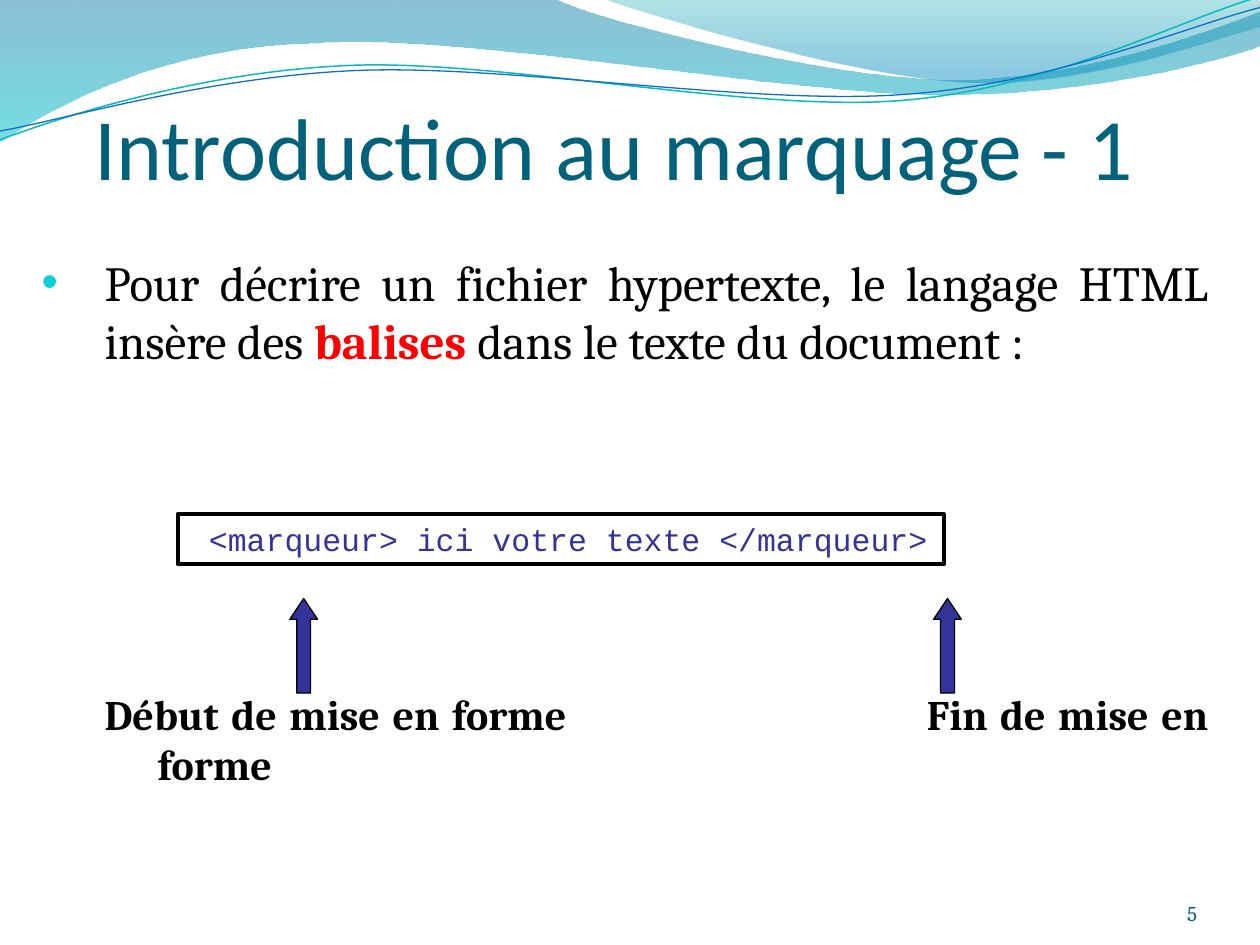
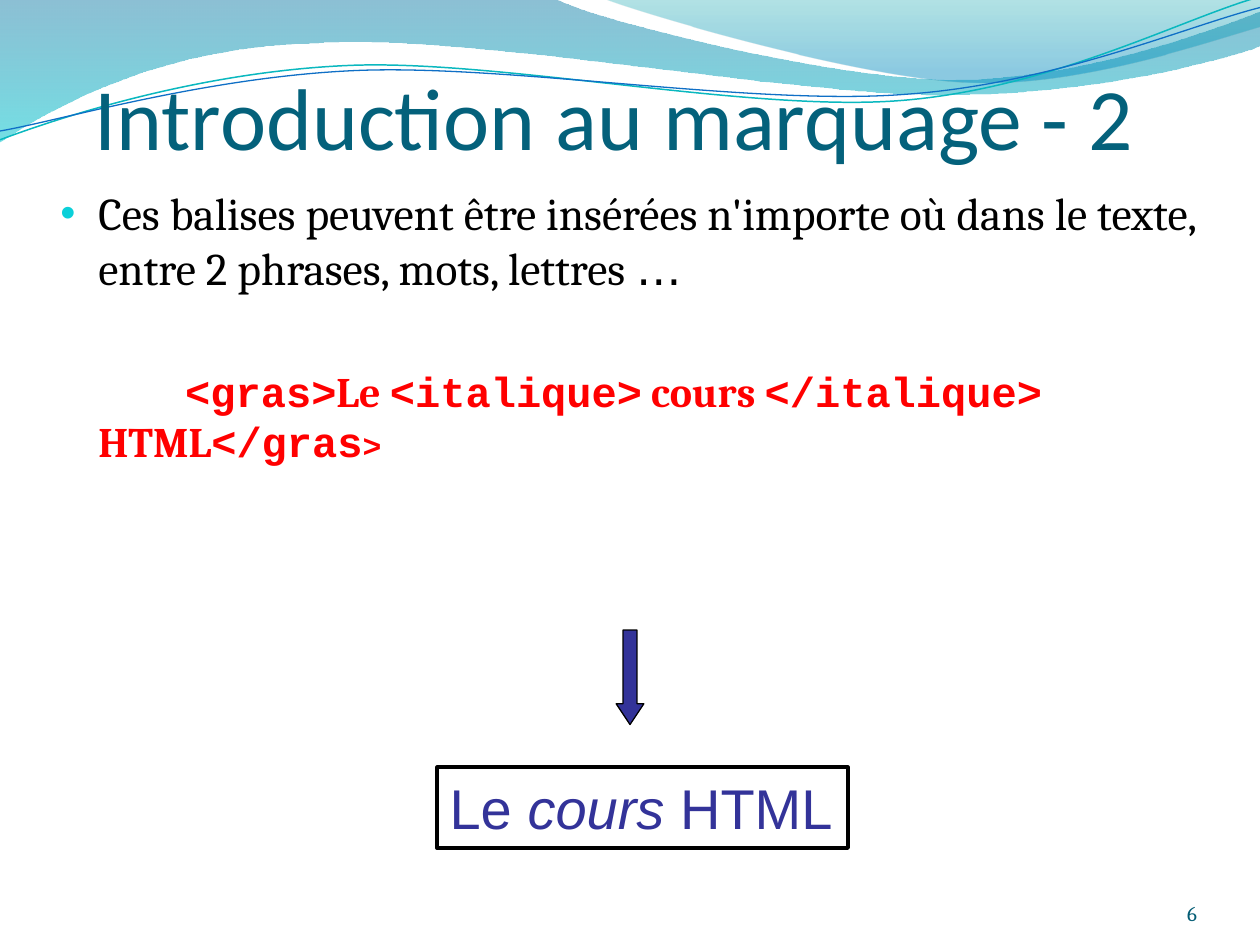
from dataclasses import dataclass

from lxml import etree
from pptx import Presentation
from pptx.dml.color import RGBColor
from pptx.enum.shapes import MSO_SHAPE
from pptx.enum.text import MSO_ANCHOR, MSO_AUTO_SIZE, PP_ALIGN
from pptx.oxml.ns import qn
from pptx.util import Inches, Pt

RECT, UP, DOWN = MSO_SHAPE.RECTANGLE, MSO_SHAPE.UP_ARROW, MSO_SHAPE.DOWN_ARROW
LEFT, RIGHT, FULL = PP_ALIGN.LEFT, PP_ALIGN.RIGHT, PP_ALIGN.JUSTIFY
TOP, LOW = MSO_ANCHOR.TOP, MSO_ANCHOR.BOTTOM
FIXED, GROW = MSO_AUTO_SIZE.NONE, MSO_AUTO_SIZE.SHAPE_TO_FIT_TEXT

PAGE = (0, 0, Inches(10), Inches(7.5))


@dataclass(frozen=True)
class Theme:
    """Colours, fonts and type sizes of the deck."""

    ink: str = "000000"
    title: str = "04617B"
    foot: str = "045D75"
    mark: str = "0BD0D9"
    hot: str = "FF0000"
    blue: str = "333399"
    head: str = "Calibri"
    text: str = "Cambria"
    code: str = "Courier New"
    sans: str = "Arial"
    sign: str = "DejaVu Sans"
    huge: int = 50
    large: int = 32
    lead: int = 28
    base: int = 26
    note: int = 24
    small: int = 18
    tiny: int = 12


T = Theme()

BANDS = [
    ([(0, 0), (4.4, -0.01),
      (4.76, 0.17, 6.64, 0.63, 7.58, 0.63), (8.53, 0.63, 9.58, 0.26, 10, 0.09),
      (10.01, 0.36),
      (9.83, 0.44, 8.7, 0.76, 7.46, 0.75), (6.22, 0.75, 3.82, 0.28, 2.57, 0.34),
      (1.29, 0.36, 0.46, 0.83, -0.01, 1.13)],
     [(0, "0074A1", 45), (1, "00C6CF", 55)]),
    ([(4.79, -0.01),
      (5.09, 0.11, 6.82, 0.62, 7.69, 0.65), (8.56, 0.69, 9.61, 0.32, 10, 0.21),
      (10, 0)],
     [(0, "00A1A9", 30), (0.8, "008BBF", 45)]),
]
LINES = [
    ([(0, 1.11), (0.48, 0.93, 1.58, 0.57, 2.77, 0.52),
      (3.95, 0.47, 5.93, 0.89, 7.13, 0.8), (8.33, 0.71, 9.38, 0.15, 9.98, -0.02)],
     "0AB8BF", 0.85),
    ([(0, 1.04), (0.47, 0.96, 1.64, 0.61, 2.83, 0.56),
      (4.03, 0.51, 5.97, 0.84, 7.17, 0.75), (8.36, 0.67, 9.41, 0.21, 10, 0.06)],
     "0F6FC6", 0.75),
]


def rgb(code):
    """Turn a hex code into a colour."""
    return RGBColor.from_string(code)


def part(box, x, y, w, h):
    """Return the part of a box given in percent of its size."""
    left, top, wide, high = box
    return (round(left + wide * x / 100), round(top + high * y / 100),
            round(wide * w / 100), round(high * h / 100))


def apply(item, **vals):
    """Set each given value on an item."""
    for key, val in vals.items():
        setattr(item, key, val)


def move(shape, box):
    """Put a shape in a box."""
    apply(shape, **dict(zip(("left", "top", "width", "height"), box)))


def write(para, runs):
    """Add runs of (text, font, size, colour, extra format)."""
    for text, name, size, tint, more in runs:
        run = para.add_run()
        run.text = text
        apply(run.font, name=name, size=Pt(size), **more)
        run.font.color.rgb = rgb(tint)


def bend(shape, steps):
    """Join the three points of each curved step into one curve."""
    nodes = iter(list(shape.element.iter(qn("a:lnTo"))))
    for step in steps:
        group = [next(nodes) for _ in range(len(step) // 2)]
        if len(group) == 1:
            continue
        curve = etree.Element(qn("a:cubicBezTo"))
        group[0].addprevious(curve)
        for node in group:
            curve.append(node[0])
            node.getparent().remove(node)


def draw(slide, steps, close):
    """Build one outline from straight and curved steps."""
    pts = [tuple(Inches(v) for v in step[n:n + 2])
           for step in steps for n in range(0, len(step), 2)]
    pen = slide.shapes.build_freeform(*pts[0], scale=1.0)
    pen.add_line_segments(pts[1:], close=close)
    shape = pen.convert_to_shape()
    shape.shadow.inherit = False
    bend(shape, steps[1:])
    return shape


def waves(slide, master):
    """Draw the top waves and move them to the master."""
    made = []
    for steps, stops in BANDS:
        band = draw(slide, steps, True)
        band.line.fill.background()
        band.fill.gradient()
        band.fill.gradient_angle = 270
        for stop, (pos, tint, _) in zip(band.fill.gradient_stops, stops):
            stop.position = pos
            stop.color.rgb = rgb(tint)
        for node, (_, _, alpha) in zip(band.element.iter(qn("a:srgbClr")), stops):
            etree.SubElement(node, qn("a:alpha")).set("val", str(alpha * 1000))
        made.append(band)
    for steps, tint, width in LINES:
        curve = draw(slide, steps, False)
        curve.fill.background()
        curve.line.color.rgb = rgb(tint)
        curve.line.width = Pt(width)
        made.append(curve)
    for n, shape in enumerate(made):
        shape.element.nvSpPr.cNvPr.set("id", str(20 + n))
        master.shapes.element.insert(2 + n, shape.element)


def title(slide, box, text):
    """Fill the title placeholder."""
    shape = slide.shapes.title
    move(shape, box)
    frame = shape.text_frame
    apply(frame, vertical_anchor=LOW, auto_size=FIXED, word_wrap=True,
          margin_left=0, margin_right=0, margin_top=Inches(0.05), margin_bottom=0)
    para = frame.paragraphs[0]
    para.alignment = LEFT
    write(para, [(text, T.head, T.huge, T.title, {})])


def mark(para, margin, indent, dot):
    """Set the indents, tab step and bullet of a paragraph."""
    props = para._p.get_or_add_pPr()
    for key, val in (("marL", margin), ("indent", indent), ("defTabSz", 1)):
        props.set(key, str(Inches(val)))
    if not dot:
        etree.SubElement(props, qn("a:buNone"))
        return
    tint = etree.SubElement(props, qn("a:buClr"))
    etree.SubElement(tint, qn("a:srgbClr")).set("val", T.mark)
    for tag, key, val in (("a:buSzPct", "val", "95000"),
                          ("a:buFont", "typeface", T.sans),
                          ("a:buChar", "char", "•")):
        etree.SubElement(props, qn(tag)).set(key, val)


def body(slide, box, align, items):
    """Fill the body from (margin, indent, bullet, space, level, runs)."""
    shape = slide.placeholders[1]
    move(shape, box)
    frame = shape.text_frame
    apply(frame, auto_size=FIXED, vertical_anchor=TOP, word_wrap=True)
    for n, (margin, indent, dot, space, level, runs) in enumerate(items):
        para = frame.add_paragraph() if n else frame.paragraphs[0]
        mark(para, margin, indent, dot)
        apply(para, alignment=align, space_before=Pt(space), level=level)
        write(para, runs)


def number(slide, box, text):
    """Place the slide number."""
    frame = slide.shapes.add_textbox(*box).text_frame
    apply(frame, word_wrap=True, vertical_anchor=LOW, margin_left=0,
          margin_right=0, margin_top=0, margin_bottom=0)
    para = frame.paragraphs[0]
    para.alignment = RIGHT
    write(para, [(text, T.text, T.tiny, T.foot, {})])


def solid(slide, kind, box, width):
    """Add a preset shape with a black outline."""
    shape = slide.shapes.add_shape(kind, *box)
    shape.shadow.inherit = False
    shape.line.color.rgb = rgb(T.ink)
    shape.line.width = Pt(width)
    return shape


def arrow(slide, kind, box):
    """Add a blue block arrow."""
    shape = solid(slide, kind, box, 0.75)
    shape.fill.solid()
    shape.fill.fore_color.rgb = rgb(T.blue)
    shape.adjustments[0], shape.adjustments[1] = 0.5, 0.75


def panel(slide, box, runs):
    """Add an outlined box with one line of text."""
    shape = solid(slide, RECT, box, 2.25)
    shape.fill.background()
    apply(shape.text_frame, word_wrap=False, vertical_anchor=TOP, auto_size=GROW)
    para = shape.text_frame.paragraphs[0]
    para.alignment = LEFT
    write(para, runs)


def syntax(slide, box):
    """Show the tag pattern with an arrow under each end."""
    panel(slide, part(box, 0, 0, 97.75, 28.17),
          [(" <marqueur> ici votre texte </marqueur>", T.code, T.small, T.blue, {})])
    for x in (14.31, 96.46):
        arrow(slide, UP, part(box, x, 47.18, 3.54, 52.82))


def result(slide, box):
    """Show the formatted text below an arrow."""
    arrow(slide, DOWN, part(box, 43.56, 0, 6.75, 43.35))
    panel(slide, part(box, 0, 63, 100, 37),
          [(text, T.sans, T.large, T.blue, {"italic": slant})
           for text, slant in (("Le ", False), ("cours", True), (" HTML", False))])


def first(slide):
    """Fill the slide on the tag pattern."""
    title(slide, part(PAGE, 7.5, 5.6, 85, 15.33), "Introduction au marquage - 1")
    lead = [
        ("Pour décrire un fichier hypertexte, le langage HTML insère des ",
         T.text, T.lead, T.ink, {}),
        ("balises", T.text, T.lead, T.hot, {"bold": True}),
        (" dans le texte du document :", T.text, T.lead, T.ink, {}),
    ]
    ends = [("Début de mise en forme\t\t\tFin de mise en forme",
             T.text, T.note, T.ink, {"bold": True})]
    body(slide, part(PAGE, 2.3, 26, 94.6, 63.6), FULL,
         [(0.5, -0.5, True, 0, 0, lead), (0.92, -0.42, False, 182, 1, ends)])
    syntax(slide, part(PAGE, 14.1, 54.4, 62.2, 18.93))


def second(slide):
    """Fill the slide on nested tags."""
    title(slide, part(PAGE, 7.5, 5.6, 85, 12.13), "Introduction au marquage - 2")
    lead = [
        ("Ces balises peuvent être insérées n'importe où dans le texte, "
         "entre 2 phrases, mots, lettres ", T.text, T.base, T.ink, {}),
        ("…", T.sign, T.base, T.ink, {}),
    ]
    words = ("<gras>", "Le ", "<italique>", " cours ", "</italique>", " HTML",
             "</gras", ">")
    tags = [(word, T.code if word[0] in "<>" else T.text,
             T.small if word == ">" else T.note, T.hot, {"bold": True})
            for word in words]
    body(slide, part(PAGE, 3.8, 18.93, 93.8, 60), LEFT,
         [(0.3, -0.3, True, 0, 0, lead), (0.3, 0.69, False, 40.5, 0, tags)])
    result(slide, part(PAGE, 34.7, 66.67, 32.6, 23.07))


def main():
    """Build and save the deck."""
    deck = Presentation()
    deck.slide_width, deck.slide_height = PAGE[2:]
    for page, fill in enumerate((first, second), 5):
        slide = deck.slides.add_slide(deck.slide_layouts[1])
        if page == 5:
            waves(slide, deck.slide_master)
        fill(slide)
        number(slide, part(PAGE, 86.7, 92.67, 8.3, 5.33), str(page))
    deck.save("out.pptx")


if __name__ == "__main__":
    main()
